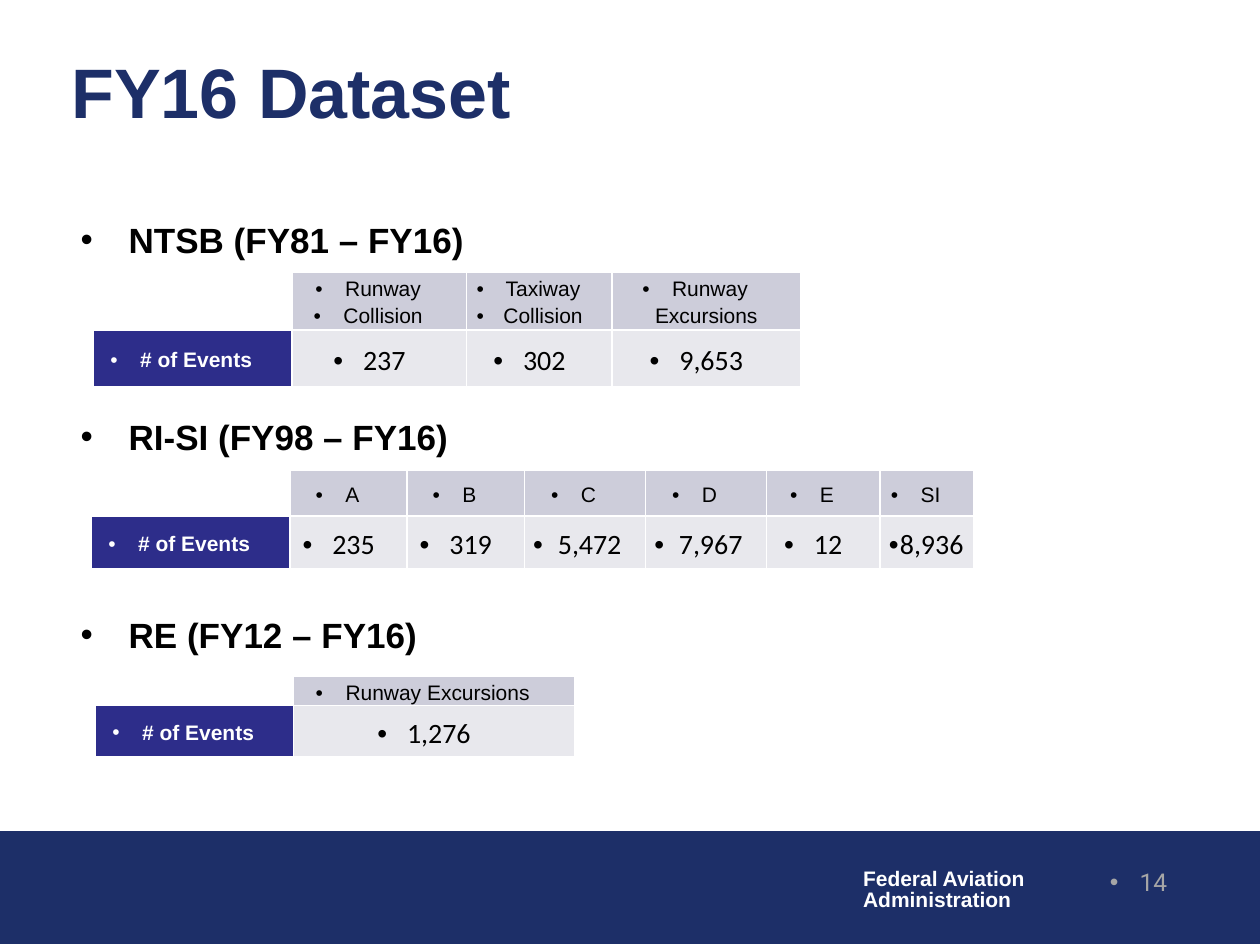
from dataclasses import dataclass

from lxml import etree
from pptx import Presentation
from pptx.dml.color import RGBColor
from pptx.enum.shapes import MSO_SHAPE
from pptx.enum.text import MSO_ANCHOR, MSO_AUTO_SIZE, PP_ALIGN
from pptx.oxml import parse_xml
from pptx.oxml.ns import nsdecls, qn
from pptx.util import Cm, Pt

RECTANGLE = MSO_SHAPE.RECTANGLE
MIDDLE, TOP = MSO_ANCHOR.MIDDLE, MSO_ANCHOR.TOP
LEFT, CENTER, RIGHT = PP_ALIGN.LEFT, PP_ALIGN.CENTER, PP_ALIGN.RIGHT
NO_AUTOFIT = MSO_AUTO_SIZE.NONE


@dataclass(frozen=True)
class Theme:
    navy: str = "1D2F68"
    label_fill: str = "2D2D8A"
    header_fill: str = "CDCDDA"
    value_fill: str = "E8E8ED"
    white: str = "FFFFFF"
    black: str = "000000"
    grey: str = "A6A6A6"
    font: str = "Arial"
    value_font: str = "Calibri"
    number_font: str = "Roboto"
    title_size: int = 40
    heading_size: int = 20
    value_size: int = 16
    number_size: int = 14
    small_size: int = 12


theme = Theme()


def add_run(paragraph, text, size, color, font=theme.font, bold=False):
    run = paragraph.add_run()
    run.text = text
    run.font.size = Pt(size)
    run.font.name = font
    run.font.bold = bold
    run.font.color.rgb = RGBColor.from_string(color)


def add_bullet(paragraph):
    properties = paragraph._p.get_or_add_pPr()
    etree.SubElement(properties, qn("a:buFont"), typeface=theme.font)
    etree.SubElement(properties, qn("a:buChar"), char="•")
    return properties


presentation = Presentation()
presentation.slide_width, presentation.slide_height = Cm(25.4), Cm(19.05)
slide = presentation.slides.add_slide(presentation.slide_layouts[1])

# Footer band
band = slide.shapes.add_shape(RECTANGLE, 0, Cm(16.76), Cm(25.4), Cm(2.26))
band.shadow.inherit = False
band.fill.solid()
band.fill.fore_color.rgb = RGBColor.from_string(theme.navy)
band.line.color.rgb = RGBColor.from_string(theme.navy)
band.line.width = Pt(0.75)

# Agency name
agency = slide.shapes.add_textbox(Cm(17.15), Cm(17.4), Cm(3.81), Cm(1.12)).text_frame
agency.word_wrap = False
for index, word_line in enumerate(["Federal Aviation", "Administration"]):
    paragraph = agency.add_paragraph() if index else agency.paragraphs[0]
    paragraph.line_spacing = 0.85
    add_run(paragraph, word_line, theme.small_size, theme.white, bold=True)

# Page number
page_number = slide.shapes.add_textbox(Cm(20.78), Cm(17.35), Cm(3), Cm(1.27)).text_frame
page_number.word_wrap = True
paragraph = page_number.paragraphs[0]
add_bullet(paragraph)
paragraph.alignment = RIGHT
add_run(paragraph, "14", theme.number_size, theme.grey, theme.number_font)

# Title
title = slide.shapes.title
title.left, title.top, title.width, title.height = Cm(1.19), Cm(0.97), Cm(23.55), Cm(1.7)
title.text_frame.auto_size = NO_AUTOFIT
title.text_frame.vertical_anchor = MIDDLE
paragraph = title.text_frame.paragraphs[0]
paragraph.alignment = LEFT
add_run(paragraph, "FY16 Dataset", theme.title_size, theme.navy, bold=True)

# Dataset headings, spaced to leave room for the tables
headings = slide.placeholders[1]
headings.left, headings.top, headings.width, headings.height = Cm(1.37), Cm(4.27), Cm(22.35), Cm(12.19)
headings.text_frame.auto_size = NO_AUTOFIT
headings.text_frame.vertical_anchor = TOP
for index, heading in enumerate(["NTSB (FY81 – FY16)", "RI-SI (FY98 – FY16)", "RE (FY12 – FY16)"]):
    paragraph = headings.text_frame.add_paragraph() if index else headings.text_frame.paragraphs[0]
    properties = add_bullet(paragraph)
    properties.set("marL", str(Cm(0.97)))
    properties.set("indent", str(-Cm(0.97)))
    paragraph.space_before = Pt(89 if index else 0)
    add_run(paragraph, heading, theme.heading_size, theme.black, bold=True)

# Event tables: left, top, column widths, row heights, side inset, headers, counts
event_tables = [
    (1.87, 5.48, [4.02, 3.52, 2.93, 3.8], [1.15, 1.15], 0.2,
     ["Runway\nCollision", "Taxiway\nCollision", "Runway Excursions"], ["237", "302", "9,653"]),
    (1.83, 9.48, [4.02, 2.36, 2.36, 2.44, 2.44, 2.29, 1.89], [0.92, 1.07], 0.18,
     ["A", "B", "C", "D", "E", "SI"], ["235", "319", "5,472", "7,967", "12", "8,936"]),
    (1.92, 13.64, [4, 5.66], [0.38, 1.02], 0.18, ["Runway Excursions"], ["1,276"]),
]
header_style = (theme.small_size, theme.black)
label_style = (theme.small_size, theme.white, theme.font, True)
value_style = (theme.value_size, theme.black, theme.value_font)

for left, top, widths, heights, inset, headers, counts in event_tables:
    events = slide.shapes.add_table(
        2, len(widths), Cm(left), Cm(top), Cm(sum(widths)), Cm(sum(heights))).table
    events.first_row = events.horz_banding = False
    for column, width in zip(events.columns, widths):
        column.width = Cm(width)
    for row, height in zip(events.rows, heights):
        row.height = Cm(height)

    for row_index, texts in enumerate([[""] + headers, ["# of Events"] + counts]):
        for column_index, text in enumerate(texts):
            cell = events.cell(row_index, column_index)
            cell.vertical_anchor = MIDDLE
            cell.margin_left = cell.margin_right = Cm(inset)
            cell.margin_top = cell.margin_bottom = 0

            # White borders come before the fill in the cell properties
            for side in ("lnL", "lnR", "lnT", "lnB"):
                cell._tc.get_or_add_tcPr().append(parse_xml(
                    f'<a:{side} {nsdecls("a")} w="{Pt(1)}"><a:solidFill>'
                    f'<a:srgbClr val="{theme.white}"/></a:solidFill></a:{side}>'))
            if not text:
                cell.fill.background()
                cell.text_frame.paragraphs[0].font.size = Pt(theme.small_size - 4)
                continue

            if row_index == 0:
                fill, style = theme.header_fill, header_style
            elif column_index == 0:
                fill, style = theme.label_fill, label_style
            else:
                fill, style = theme.value_fill, value_style
            cell.fill.solid()
            cell.fill.fore_color.rgb = RGBColor.from_string(fill)
            for index, word_line in enumerate(text.split("\n")):
                paragraph = cell.text_frame.add_paragraph() if index else cell.text_frame.paragraphs[0]
                add_bullet(paragraph)
                paragraph.alignment = CENTER
                paragraph.line_spacing = 1.15
                add_run(paragraph, word_line, *style)

presentation.save("out.pptx")
